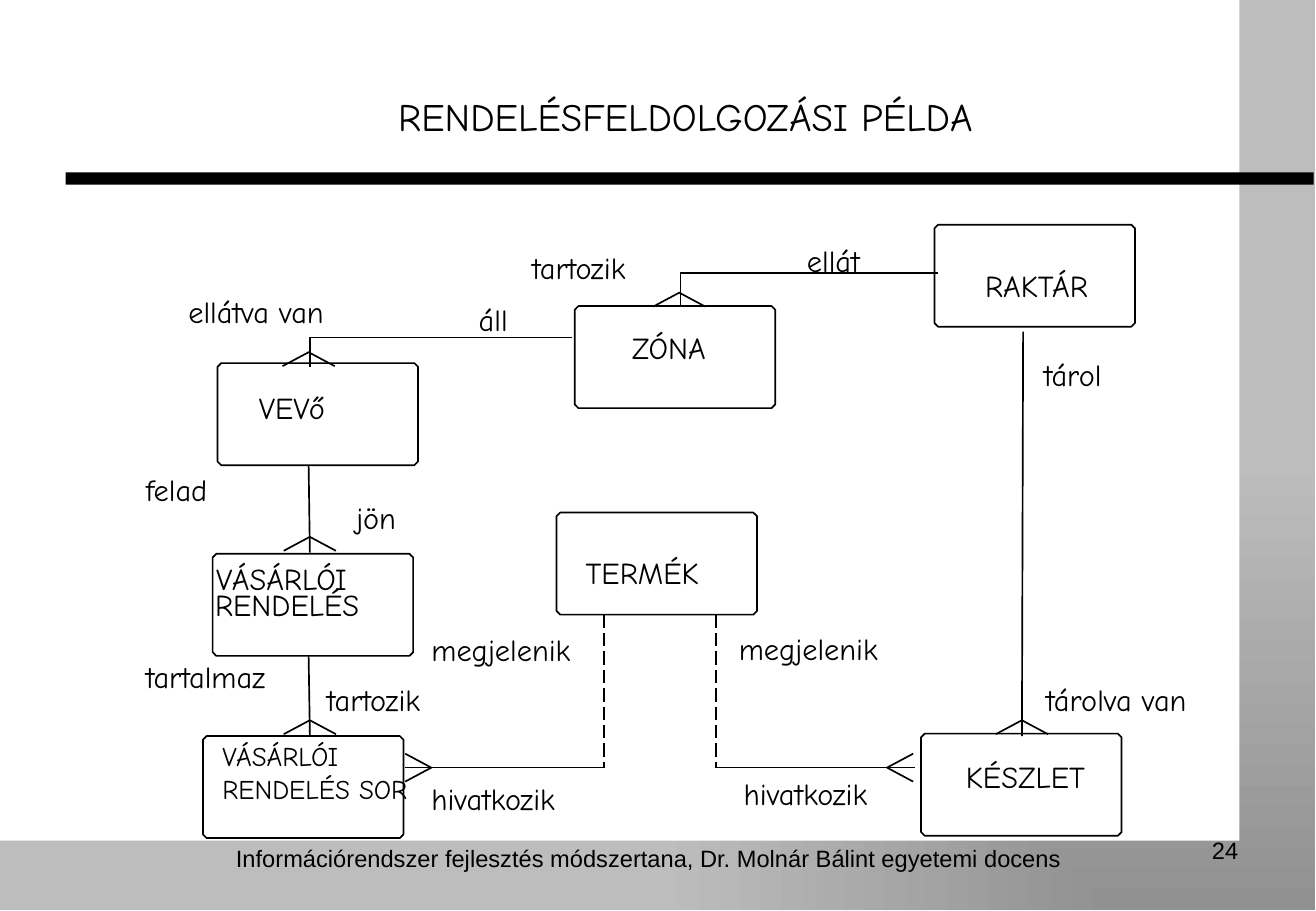
from dataclasses import dataclass

from lxml.etree import SubElement
from pptx import Presentation
from pptx.dml.color import RGBColor
from pptx.enum.dml import MSO_LINE
from pptx.enum.shapes import MSO_CONNECTOR, MSO_SHAPE
from pptx.enum.text import MSO_ANCHOR, MSO_AUTO_SIZE, PP_ALIGN
from pptx.oxml.ns import qn
from pptx.util import Inches, Pt


@dataclass(frozen=True)
class Theme:
    ink: RGBColor = RGBColor(0, 0, 0)
    paper: RGBColor = RGBColor(255, 255, 255)
    edge_dark: RGBColor = RGBColor(0x91, 0x91, 0x91)
    edge_light: RGBColor = RGBColor(0xBD, 0xBD, 0xBD)
    hand: str = "Comic Neue"
    plain: str = "Arial"
    title: int = 23
    label: int = 18
    small: int = 16
    footer: int = 14
    stroke: int = 1


CELL = 0.1  # inches per grid column and row
BOX_W, BOX_H, CORNER = 16.5, 8.4, 0.3
FOOT_LONG, FOOT_HALF = 1.15, 2.15
LEFT, CENTER, RIGHT = PP_ALIGN.LEFT, PP_ALIGN.CENTER, PP_ALIGN.RIGHT


def grid(*cells):
    return [Inches(c * CELL) for c in cells]


def set_formats(target, formats):
    for name, value in formats.items():
        setattr(target, name, value)


class Diagram:
    """Draws on one slide; all lengths are columns and rows of the grid."""

    def __init__(self, prs, theme):
        self.theme = theme
        self.s = prs.slides.add_slide(prs.slide_layouts[5])

    def panel(self, x, y, w, h, color=None):
        sp = self.s.shapes.add_shape(MSO_SHAPE.RECTANGLE, *grid(x, y, w, h))
        sp.shadow.inherit = False
        sp.line.fill.background()
        if color is not None:
            sp.fill.solid()
            sp.fill.fore_color.rgb = color
        return sp

    def corner_gradient(self, sp):
        """Shade a shape from its bottom right corner outwards."""
        sp.fill.gradient()
        colors = self.theme.edge_dark, self.theme.edge_light
        for stop, color in zip(sp.fill.gradient_stops, colors):
            stop.color.rgb = color
        grad = sp._element.spPr.find(qn("a:gradFill"))
        lin = grad.find(qn("a:lin"))
        focus = lin.makeelement(qn("a:path"), {"path": "rect"})
        SubElement(focus, qn("a:fillToRect"), l="100000", t="100000", r="0", b="0")
        grad.replace(lin, focus)

    def set_text(self, sp, text, size, font, align, inset=0):
        tf = sp.text_frame
        margins = ("margin_left", "margin_right", "margin_top", "margin_bottom")
        insets = Inches(inset), Inches(inset), Inches(inset / 2), Inches(inset / 2)
        set_formats(tf, dict(zip(margins, insets), word_wrap=True,
                             auto_size=MSO_AUTO_SIZE.NONE,
                             vertical_anchor=MSO_ANCHOR.TOP))
        p = tf.paragraphs[0]
        p.alignment = align
        r = p.add_run()
        r.text = text
        set_formats(r.font, {"size": Pt(size), "name": font, "bold": False})
        r.font.color.rgb = self.theme.ink

    def title(self, text, x, y, w, h):
        sp = self.s.shapes.title
        set_formats(sp, dict(zip(("left", "top", "width", "height"), grid(x, y, w, h))))
        self.set_text(sp, text, self.theme.title, self.theme.hand, CENTER)
        self.s.shapes._spTree.append(sp._element)  # above the panels

    def label(self, text, x, y, w, h=2, align=LEFT, size=None):
        sp = self.s.shapes.add_textbox(*grid(x, y, w, h))
        self.set_text(sp, text, size or self.theme.label, self.theme.hand, align)

    def footer(self, text, x, y, w, h, align):
        sp = self.s.shapes.add_textbox(*grid(x, y, w, h))
        self.set_text(sp, text, self.theme.footer, self.theme.plain, align, inset=0.1)

    def outline(self, points, close=False):
        first, *rest = [grid(*point) for point in points]
        builder = self.s.shapes.build_freeform(*first)
        builder.add_line_segments(rest, close=close)
        sp = builder.convert_to_shape()
        sp.shadow.inherit = False
        sp.fill.background()
        self.stroke(sp.line)

    def stroke(self, line):
        line.color.rgb = self.theme.ink
        line.width = Pt(self.theme.stroke)

    def entity(self, x, y):
        r, b, c = x + BOX_W, y + BOX_H, CORNER
        self.outline([(r, b - c), (r - c, b), (x + c, b), (x, b - c),
                      (x, y + c), (x + c, y), (r - c, y), (r, y + c)], close=True)

    def crow_foot(self, x, y, dx=0, dy=0):
        """Draw a fork with its tip at x, y, opening towards dx, dy."""
        if dy:
            ends = [(x + k * FOOT_HALF, y + dy * FOOT_LONG) for k in (-1, 1)]
        else:
            ends = [(x + dx * FOOT_HALF, y + k * FOOT_LONG) for k in (-1, 1)]
        self.outline([ends[0], (x, y), ends[1]])

    def link(self, x1, y1, x2, y2, dashed=False):
        cn = self.s.shapes.add_connector(MSO_CONNECTOR.STRAIGHT, *grid(x1, y1, x2, y2))
        self.stroke(cn.line)
        if dashed:
            cn.line.dash_style = MSO_LINE.LONG_DASH
        SubElement(cn._element.spPr, qn("a:effectLst"))


ENTITIES = [(16.7, 60.6), (75.8, 60.4), (76.9, 18.5), (47.3, 25.2),
            (45.8, 42.2), (17.5, 45.6), (17.9, 29.9)]

ENTITY_NAMES = [
    ("VEVő", 21.3, 32, 7.4), ("ZÓNA", 52, 27.1, 10.3),
    ("RAKTÁR", 79.7, 22, 11.2, 2, CENTER), ("VÁSÁRLÓI", 17.8, 46.1, 13.6),
    ("RENDELÉS", 17.7, 48.3, 13.9), ("TERMÉK", 48.2, 45.6, 11.4),
    ("KÉSZLET", 78.4, 62.4, 12, 2, CENTER),
]

ROLES = [
    ("megjelenik", 60.8, 51.9, 15.6), ("megjelenik", 35.5, 52, 14.2),
    ("hivatkozik", 35.5, 64.2, 13.7), ("hivatkozik", 61.2, 63.8, 12.8),
    ("tárolva van", 86.1, 56.1, 13.4), ("tartozik", 26.9, 56.1, 11.6),
    ("tartalmaz", 12, 54.2, 12.4), ("jön", 29.3, 41.1, 4.5),
    ("felad", 12, 38.8, 7), ("ellátva van", 15.5, 24.1, 16.1),
    ("áll", 39.4, 24.8, 5.6), ("tartozik", 43.8, 20.5, 11),
    ("ellát", 66.4, 19.9, 5.8), ("tárol", 85.9, 29.3, 13.4),
]

ELBOWS = [[(77.2, 22.5), (56, 22.5), (56, 25.3)],
          [(47.1, 27.8), (25.5, 27.8), (25.5, 30.2)]]

LINKS = [(25.4, 38.3, 25.5, 45.5), (25.4, 54, 25.5, 60.5),
         (84.2, 27.3, 84.1, 60.6), (49.7, 63.2, 33.3, 63.2),
         (75.3, 63.2, 59, 63.2)]
DASHED_COLUMNS = [49.7, 58.9]

FEET_DOWN = [(55.9, 24.1), (25.4, 29), (25.5, 44.2), (25.5, 59.3), (84.1, 59.3)]
FEET_SIDE = [(35.5, 63.2, -1), (73, 63.2, 1)]


def main():
    prs = Presentation()
    set_formats(prs, {"slide_width": Inches(10.83), "slide_height": Inches(7.5)})
    theme = Theme()
    d = Diagram(prs, theme)

    d.corner_gradient(d.panel(0, 0, 108.2, 74.9))
    d.panel(0, 0, 102, 69.2, theme.paper)
    d.panel(5.4, 14.2, 102.7, 1, theme.ink)
    d.title("RENDELÉSFELDOLGOZÁSI PÉLDA", 12.9, 7.6, 87.1, 5.5)
    d.footer("Információrendszer fejlesztés módszertana, "
             "Dr. Molnár Bálint egyetemi docens", 15.6, 69, 75.6, 6, CENTER)
    d.footer("24", 77.6, 68.3, 25.3, 5.2, RIGHT)

    for corner in ENTITIES:
        d.entity(*corner)
    for points in ELBOWS:
        d.outline(points)
    for ends in LINKS:
        d.link(*ends)
    for x in DASHED_COLUMNS:
        d.link(x, 50.6, x, 63.2, dashed=True)
    for x, y in FEET_DOWN:
        d.crow_foot(x, y, dy=1)
    for x, y, side in FEET_SIDE:
        d.crow_foot(x, y, dx=side)
    for label in ENTITY_NAMES + ROLES:
        d.label(*label)
    d.label("VÁSÁRLÓI RENDELÉS SOR", 18.3, 60.9, 15.8, 5.5, size=theme.small)

    prs.save("out.pptx")


if __name__ == "__main__":
    main()
